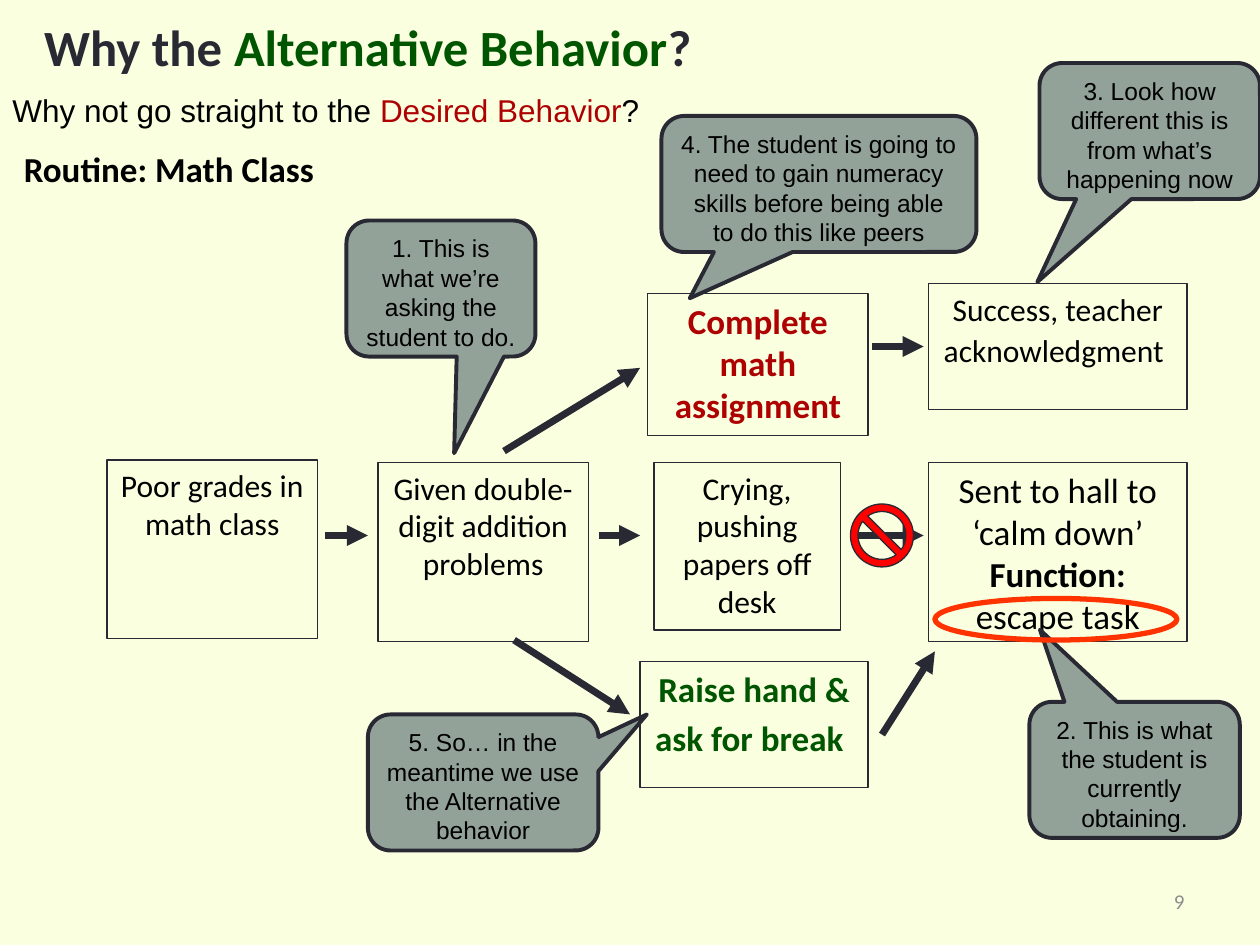
from dataclasses import dataclass

from lxml import etree
from pptx import Presentation
from pptx import util as u
from pptx.dml.color import RGBColor
from pptx.enum import shapes, text
from pptx.oxml.ns import qn

INK, BLACK, RED, GREEN, SAGE = "292934", "000000", "AE0101", "005500", "93A299"
PRESET = shapes.MSO_SHAPE
ALIGN = text.PP_ALIGN


@dataclass
class Run:
    words: str
    size: float = 18
    color: str = BLACK
    bold: bool = False
    font: str = "Calibri"


@dataclass
class Box:
    place: tuple[float, float, float, float]
    runs: list[Run]


@dataclass
class Callout:
    place: tuple[float, float, float, float]
    pointer: tuple[float, float]
    words: str


@dataclass
class Arrow:
    start: tuple[float, float]
    end: tuple[float, float]


BOXES = [
    Box((7.37, 2.25, 2.05, 1), [Run("Success, teacher acknowledgment"), Run(" ", 20)]),
    Box((7.37, 3.67, 2.05, 1.42), [Run("Sent to hall to ‘calm down’ ", 20),
                                   Run("Function:", 20, bold=True), Run(" escape task", 20)]),
    Box((5.14, 2.33, 1.75, 1.13), [Run("Complete math assignment", 20, RED, True)]),
    Box((5.19, 3.67, 1.48, 1.33), [Run("Crying, pushing papers off desk")]),
    Box((5.08, 5.25, 1.81, 1), [Run("Raise hand & ask for break", 20, GREEN, True),
                                Run(" ", 24, GREEN, True)]),
    Box((3, 3.67, 1.67, 1.42), [Run("Given double-digit addition problems")]),
    Box((0.85, 3.65, 1.67, 1.42), [Run("Poor grades in math class")]),
]

ARROWS = [
    Arrow((2.58, 4.25), (2.92, 4.25)),
    Arrow((4.75, 4.25), (5.08, 4.25)),
    Arrow((6.75, 4.25), (7.33, 4.25)),
    Arrow((6.92, 2.75), (7.33, 2.75)),
    Arrow((7, 5.83), (7.42, 5.17)),
    Arrow((4.08, 5.08), (5, 5.67)),
    Arrow((4, 3.58), (5.08, 2.92)),
]

CALLOUTS = [
    Callout((2.75, 1.75, 1.5, 1.08), (0.07, 1.21),
            "1. This is what we’re asking the student to do."),
    Callout((8.17, 5.57, 1.67, 1.08), (-0.45, -1.03),
            "2. This is what the student is currently obtaining."),
    Callout((8.25, 0.5, 1.75, 1.08), (-0.51, 1.11),
            "3. Look how different this is from what’s happening now"),
    Callout((5.25, 0.92, 2.5, 1.08), (-0.41, 0.84),
            "4. The student is going to need to gain numeracy skills "
            "before being able to do this like peers"),
    Callout((2.92, 5.67, 1.83, 1.08), (0.71, -0.5),
            "5. So… in the meantime we use the Alternative behavior"),
]


def rgb(color: str) -> RGBColor:
    return RGBColor.from_string(color)


def inches(place: tuple) -> list:
    return [u.Inches(length) for length in place]


def write(shape, runs: list[Run], align=ALIGN.LEFT, anchor=text.MSO_ANCHOR.TOP) -> None:
    frame = shape.text_frame
    frame.word_wrap = True
    frame.vertical_anchor = anchor
    paragraph = frame.paragraphs[0]
    paragraph.alignment = align
    for item in runs:
        run = paragraph.add_run()
        run.text = item.words
        run.font.name = item.font
        run.font.size = u.Pt(item.size)
        run.font.bold = item.bold
        run.font.color.rgb = rgb(item.color)


def add_text(slide, place: tuple, runs: list[Run], **layout) -> None:
    write(slide.shapes.add_textbox(*inches(place)), runs, **layout)


def add_outline(slide, preset, place: tuple, width: float, line=INK, fill=None):
    """Add a preset shape without shadow; no fill colour leaves it hollow."""
    shape = slide.shapes.add_shape(preset, *inches(place))
    shape.shadow.inherit = False
    shape.line.color.rgb = rgb(line)
    shape.line.width = u.Pt(width)
    if fill:
        shape.fill.solid()
        shape.fill.fore_color.rgb = rgb(fill)
    else:
        shape.fill.background()
    return shape


def add_box(slide, box: Box) -> None:
    shape = add_outline(slide, PRESET.RECTANGLE, box.place, 0.75)
    write(shape, box.runs, ALIGN.CENTER)


def add_callout(slide, callout: Callout) -> None:
    shape = add_outline(slide, PRESET.ROUNDED_RECTANGULAR_CALLOUT, callout.place, 2.25, fill=SAGE)
    shape.adjustments[0], shape.adjustments[1] = callout.pointer
    write(shape, [Run(callout.words, 14, font="Arial")], ALIGN.CENTER)


def add_arrow(slide, arrow: Arrow) -> None:
    connector = slide.shapes.add_connector(
        shapes.MSO_CONNECTOR.STRAIGHT, *inches(arrow.start + arrow.end))
    connector.line.color.rgb = rgb(INK)
    connector.line.width = u.Pt(4)
    etree.SubElement(connector.line._get_or_add_ln(), qn("a:tailEnd"), type="triangle")
    etree.SubElement(connector._element.spPr, qn("a:effectLst"))


def main() -> None:
    presentation = Presentation()
    presentation.slide_width, presentation.slide_height = u.Inches(10), u.Inches(7.5)
    slide = presentation.slides.add_slide(presentation.slide_layouts[5])
    slide.background.fill.solid()
    slide.background.fill.fore_color.rgb = rgb("FAFFE0")

    title = slide.shapes.title
    title.left, title.top, title.width, title.height = inches((0.25, 0.08, 9.5, 0.58))
    write(title, [Run("Why the ", 29, INK, True), Run("Alternative Behavior", 29, GREEN, True),
                  Run("?", 29, INK, True)], anchor=text.MSO_ANCHOR.MIDDLE)
    add_text(slide, (0, 0.67, 10, 0.4), [
        Run("Why not go straight to the ", font="Arial"),
        Run("Desired Behavior", color=RED, font="Arial"),
        Run("?", font="Arial")])
    add_text(slide, (0.09, 1.12, 3.58, 0.43), [Run("Routine: Math Class", 20, bold=True)])

    for box in BOXES:
        add_box(slide, box)
    for arrow in ARROWS:
        add_arrow(slide, arrow)
    for callout in CALLOUTS:
        add_callout(slide, callout)

    no_sign = add_outline(slide, PRESET.NO_SYMBOL, (6.75, 4, 0.5, 0.5), 0.75, fill="FF0000")
    no_sign.adjustments[0] = 0.12
    add_outline(slide, PRESET.OVAL, (7.42, 4.75, 1.92, 0.33), 3, line="FF3300")
    add_text(slide, (7.17, 6.95, 2.33, 0.4), [Run("9", 12, "8D8D8F")],
             align=ALIGN.RIGHT, anchor=text.MSO_ANCHOR.MIDDLE)

    presentation.save("out.pptx")


if __name__ == "__main__":
    main()
